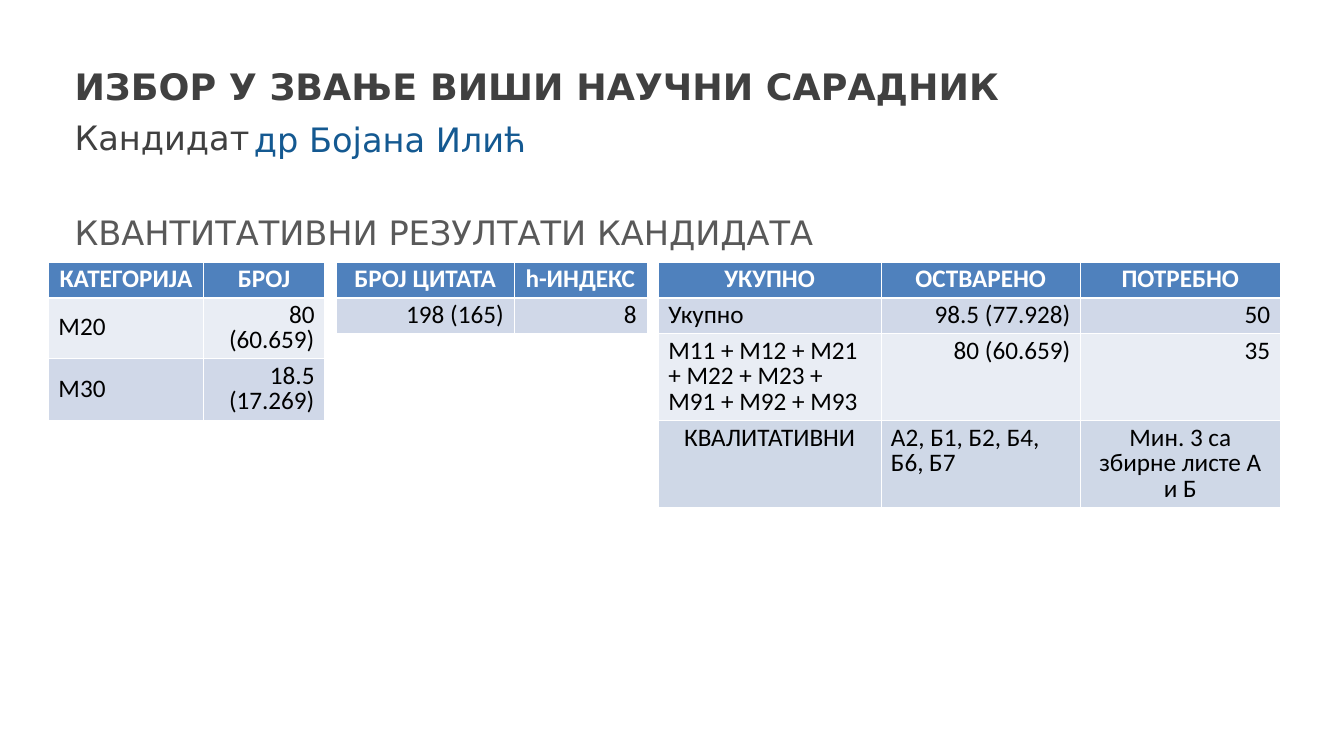
from lxml.etree import SubElement
from pptx import Presentation
from pptx.dml.color import RGBColor
from pptx.enum.text import MSO_ANCHOR as Anchor, PP_ALIGN as Align
from pptx.oxml.ns import qn
from pptx.util import Cm, Pt

WHITE, BLACK, HEADER, BAND, PALE, LAST = "FFFFFF", "000000", "4F81BD", "D0D8E8", "E9EDF4", "CFD8E7"
THIN, THICK = 0.45, 1.47
L, C, R = Align.LEFT, Align.CENTER, Align.RIGHT

HEADINGS = [
    ("Кандидат", (1.63, 2.82, 30.63, 1.27), Anchor.TOP, "404040", {"size": Pt(24)}, {}),
    ("КВАНТИТАТИВНИ РЕЗУЛТАТИ КАНДИДАТА", (1.63, 5, 30.63, 1.47), Anchor.BOTTOM, "595959",
     {"size": Pt(24)}, {}),
    ("ИЗБОР У ЗВАЊЕ ВИШИ НАУЧНИ САРАДНИК", (1.63, 1.37, 30.63, 1.47), Anchor.BOTTOM, "404040",
     {"size": Pt(26), "bold": True}, {}),
    ("др Бојана Илић", (6.15, 2.84, 17.15, 1.22), Anchor.MIDDLE, "145991",
     {"size": Pt(24)}, {"line_spacing": 1.1, "space_after": Pt(6)}),
]

TABLES_TOP = 6.6
RESULT_TABLES = [
    (16.59, [5.61, 5.03, 5.03], Anchor.TOP, [
        (0.9, HEADER, [("УКУПНО", C), ("ОСТВАРЕНО", C), ("ПОТРЕБНО", C)]),
        (0.91, BAND, [("Укупно", L), ("98.5 (77.928)", R), ("50", R)]),
        (2.19, PALE, [("М11 + М12 + М21 + М22 + М23 + М91 + М92 + М93", L),
                      ("80 (60.659)", R), ("35", R)]),
        (2.19, LAST, [("КВАЛИТАТИВНИ", C), ("А2, Б1, Б2, Б4, Б6, Б7", L),
                      ("Мин. 3 са збирне листе А и Б", C)]),
    ]),
    (1.22, [3.91, 3.05], Anchor.MIDDLE, [
        (0.9, HEADER, [("КАТЕГОРИЈА", C), ("БРОЈ", C)]),
        (1.54, PALE, [("М20", L), ("80 (60.659)", R)]),
        (1.54, BAND, [("М30", L), ("18.5 (17.269)", R)]),
    ]),
    (8.48, [4.47, 3.35], Anchor.MIDDLE, [
        (0.9, HEADER, [("БРОЈ ЦИТАТА", C), ("h-ИНДЕКС", C)]),
        (0.91, BAND, [("198 (165)", R), ("8", R)]),
    ]),
]


def color(hex_string):
    """Turn a hex string into a colour."""
    return RGBColor.from_string(hex_string)


def apply_format(target, values):
    """Set each named attribute on the target."""
    for name, value in values.items():
        setattr(target, name, value)


def write_text(frame, text, ink, font, paragraph_format):
    """Write one formatted paragraph into a text frame."""
    paragraph = frame.paragraphs[0]
    apply_format(paragraph, paragraph_format)
    run = paragraph.add_run()
    run.text = text
    apply_format(run.font, font)
    run.font.color.rgb = color(ink)


def add_heading(slide, text, box, anchor, ink, font, paragraph_format):
    """Place a line of heading text in its box."""
    frame = slide.shapes.add_textbox(*map(Cm, box)).text_frame
    apply_format(frame, {"word_wrap": True, "vertical_anchor": anchor})
    write_text(frame, text, ink, {"name": "DejaVu Sans", **font}, paragraph_format)


def add_borders(cell, widths):
    """Draw white borders of the given point widths by side."""
    properties = cell._tc.get_or_add_tcPr()
    for side, width in widths.items():
        line = SubElement(properties, qn(f"a:ln{side}"), w=str(int(Pt(width))))
        SubElement(SubElement(line, qn("a:solidFill")), qn("a:srgbClr"), val=WHITE)


def fill_cell(cell, text, align, fill, anchor, row_index):
    """Write and style one cell, with a thick rule below the header row."""
    is_header = row_index == 0
    cell.vertical_anchor = anchor
    add_borders(cell, {"L": THIN, "R": THIN,
                       "T": THICK if row_index == 1 else THIN,
                       "B": THICK if is_header else THIN})
    cell.fill.solid()
    cell.fill.fore_color.rgb = color(fill)
    write_text(cell.text_frame, text, WHITE if is_header else BLACK,
               {"name": "Calibri", "size": Pt(18), "bold": is_header},
               {"alignment": align, "line_spacing": 0.83})


def add_result_table(slide, left, widths, anchor, rows):
    """Place one table of results below the section heading."""
    height = sum(row[0] for row in rows)
    table = slide.shapes.add_table(len(rows), len(widths), Cm(left), Cm(TABLES_TOP),
                                   Cm(sum(widths)), Cm(height)).table
    for column, width in zip(table.columns, widths):
        column.width = Cm(width)
    for row_index, (row_height, fill, entries) in enumerate(rows):
        table.rows[row_index].height = Cm(row_height)
        for column_index, (text, align) in enumerate(entries):
            fill_cell(table.cell(row_index, column_index), text, align, fill, anchor, row_index)


def main():
    """Build the candidate results slide."""
    deck = Presentation()
    apply_format(deck, {"slide_width": Cm(33.87), "slide_height": Cm(19.05)})
    slide = deck.slides.add_slide(deck.slide_layouts[6])
    for heading in HEADINGS:
        add_heading(slide, *heading)
    for result_table in RESULT_TABLES:
        add_result_table(slide, *result_table)
    deck.save("out.pptx")


if __name__ == "__main__":
    main()
